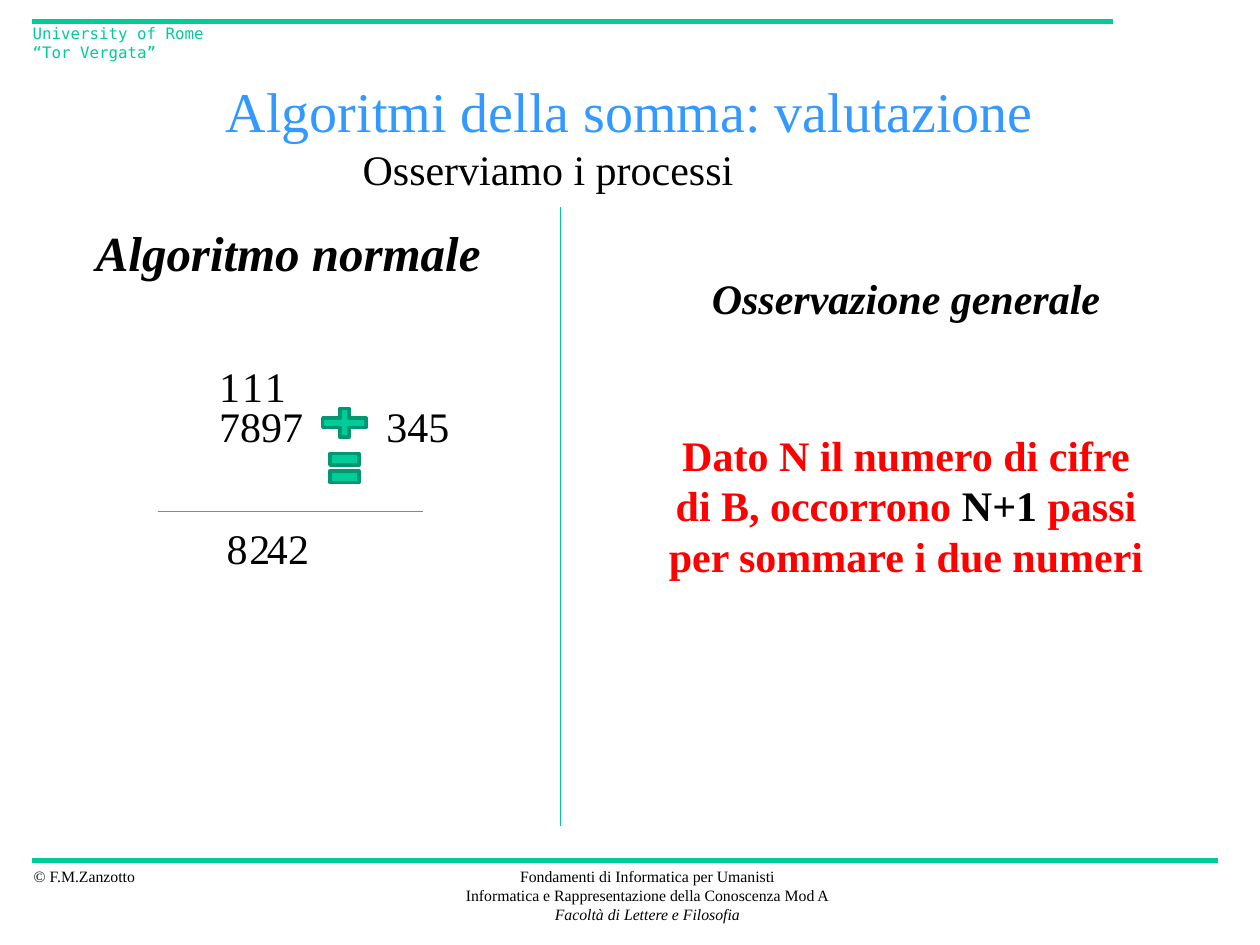
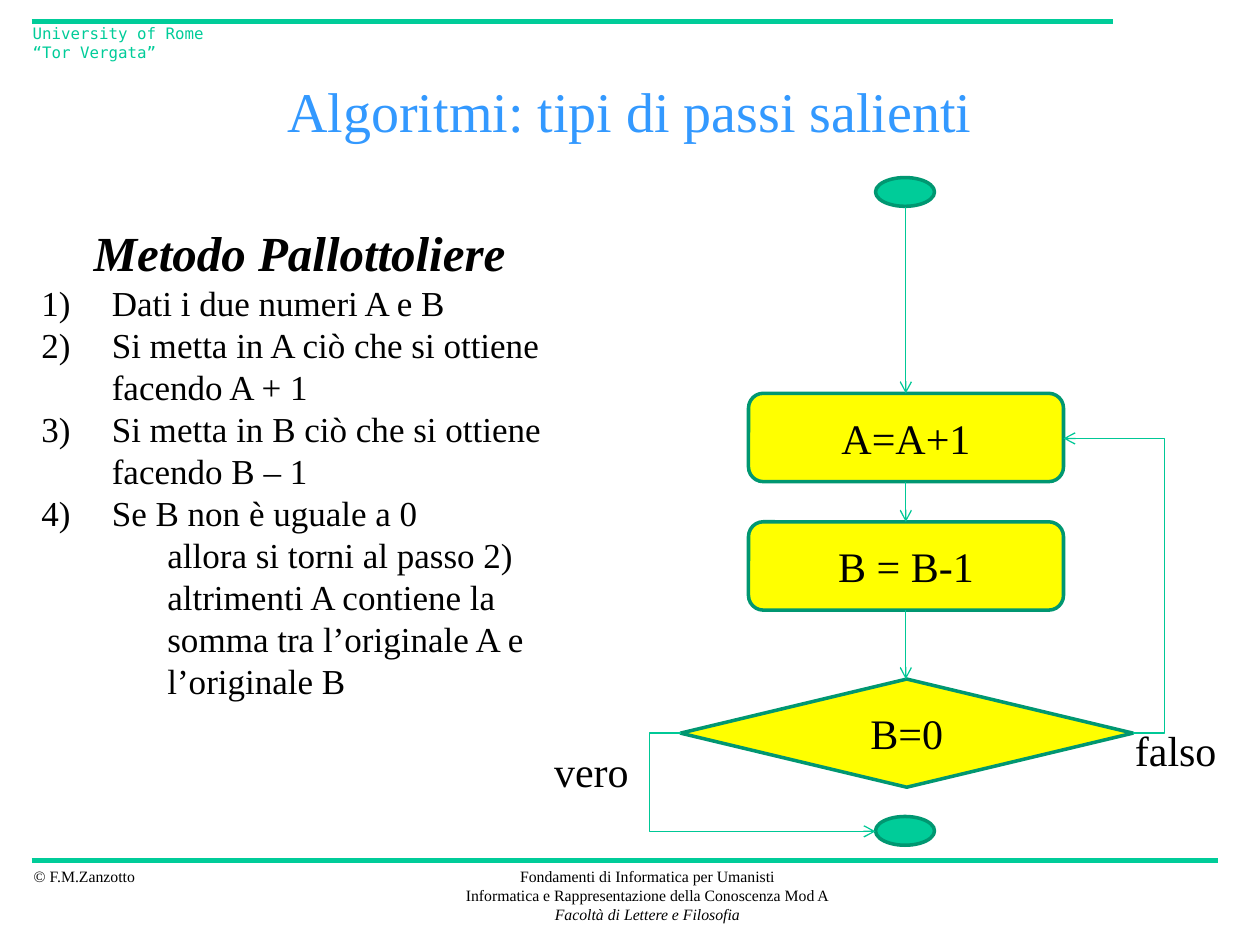
"""Builds two lecture slides on addition algorithms."""
from lxml.etree import SubElement
from pptx import Presentation
from pptx.dml.color import RGBColor
from pptx.enum.shapes import MSO_CONNECTOR as LINK, MSO_SHAPE as SHAPE
from pptx.enum.text import MSO_ANCHOR as ANCHOR, MSO_AUTO_SIZE as FIT, PP_ALIGN as ALIGN
from pptx.oxml.ns import qn
from pptx.util import Cm, Pt

GREEN = RGBColor(0x00, 0xCC, 0x99)
LINK_GREEN = RGBColor(0x00, 0xC8, 0x96)
DARK_GREEN = RGBColor(0x00, 0x97, 0x71)
BLUE = RGBColor(0x33, 0x99, 0xFF)
YELLOW = RGBColor(0xFF, 0xFF, 0x00)
RED = RGBColor(0xFF, 0x00, 0x00)
BLACK = RGBColor(0x00, 0x00, 0x00)
SERIF = "Times New Roman"
MONO = "DejaVu Sans Mono"


def write(paragraph, text, size=24, color=BLACK, font=SERIF, bold=False, italic=False,
          align=ALIGN.LEFT):
    paragraph.alignment = align
    run = paragraph.add_run()
    run.text = text
    run.font.name = font
    run.font.size = Pt(size)
    run.font.bold = bold
    run.font.italic = italic
    run.font.color.rgb = color


def next_paragraph(frame):
    first = frame.paragraphs[0]
    return frame.add_paragraph() if first.runs else first


class Lecture:
    def __init__(self):
        self.deck = Presentation()
        self.deck.slide_width, self.deck.slide_height = Cm(25.4), Cm(19.05)
        self.slide = None

    def start(self, title):
        self.slide = self.deck.slides.add_slide(self.deck.slide_layouts[1])
        self.line(0.64, 17.35, 24.56, 17.35, color=GREEN, width=3)
        self.line(0.64, 0.43, 22.43, 0.43, color=GREEN, width=3)
        self.label("© F.M.Zanzotto", 0.43, 17.35, 2.59, 0.64, size=9)
        footer = self.label("Fondamenti di Informatica per Umanisti",
                            9.09, 17.35, 7.92, 1.42, size=9, align=ALIGN.CENTER)
        write(footer.add_paragraph(), "Informatica e Rappresentazione della Conoscenza Mod A",
              size=9, align=ALIGN.CENTER)
        write(footer.add_paragraph(), "Facoltà di Lettere e Filosofia",
              size=9, italic=True, align=ALIGN.CENTER)
        self.label("University of Rome “Tor Vergata”", 0.41, 0.36, 4.34, 0.64, wrap=True,
                   size=9, color=GREEN, font=MONO)
        frame = self.place(self.slide.shapes.title, 1.9, 1.27, 21.6, 1.9)
        frame.vertical_anchor = ANCHOR.MIDDLE
        write(frame.paragraphs[0], title, size=32, color=BLUE, align=ALIGN.CENTER)

    def place(self, holder, left, top, width, height):
        holder.left, holder.top = Cm(left), Cm(top)
        holder.width, holder.height = Cm(width), Cm(height)
        holder.text_frame.auto_size = FIT.NONE
        return holder.text_frame

    def body(self, heading, left, width):
        frame = self.place(self.slide.placeholders[1], left, 4.17, width, 13.13)
        frame.margin_top = Cm(0.32)
        self.item(frame, heading, 0.97, -0.97, size=28, bold=True, italic=True,
                  align=ALIGN.CENTER)
        return frame

    def item(self, frame, text, margin, indent, level=0, numbered=False, **style):
        paragraph = next_paragraph(frame)
        paragraph.level = level
        paragraph.space_before = Pt(0)
        props = paragraph._p.get_or_add_pPr()
        props.set("marL", str(Cm(margin)))
        props.set("indent", str(Cm(indent)))
        if numbered:
            SubElement(props, qn("a:buFont"), typeface=SERIF)
            SubElement(props, qn("a:buAutoNum"), type="arabicParenR")
        else:
            SubElement(props, qn("a:buNone"))
        write(paragraph, text, **style)

    def label(self, text, left, top, width, height, wrap=False, **style):
        box = self.slide.shapes.add_textbox(Cm(left), Cm(top), Cm(width), Cm(height))
        box.text_frame.word_wrap = wrap
        write(box.text_frame.paragraphs[0], text, **style)
        return box.text_frame

    def shape(self, kind, left, top, width, height, text="", fill=GREEN):
        shape = self.slide.shapes.add_shape(kind, Cm(left), Cm(top), Cm(width), Cm(height))
        shape.shadow.inherit = False
        shape.fill.solid()
        shape.fill.fore_color.rgb = fill
        shape.line.color.rgb = DARK_GREEN
        shape.line.width = Pt(2)
        if text:
            shape.text_frame.vertical_anchor = ANCHOR.MIDDLE
            write(shape.text_frame.paragraphs[0], text, align=ALIGN.CENTER)

    def line(self, x1, y1, x2, y2, color=LINK_GREEN, width=0.75, arrow=False, bend=None):
        kind = LINK.STRAIGHT if bend is None else LINK.ELBOW
        link = self.slide.shapes.add_connector(kind, Cm(x1), Cm(y1), Cm(x2), Cm(y2))
        link.line.color.rgb = color
        link.line.width = Pt(width)
        props = link._element.spPr
        if arrow:
            SubElement(props.find(qn("a:ln")), qn("a:tailEnd"), type="arrow")
        if bend is not None:
            adjust = props.find(qn("a:prstGeom")).find(qn("a:avLst"))
            SubElement(adjust, qn("a:gd"), name="adj1", fmla=f"val {round(bend * 100000)}")
        SubElement(props, qn("a:effectLst"))


def evaluation(lecture):
    lecture.start("Algoritmi della somma: valutazione")
    lecture.body("Algoritmo normale", 0.41, 10.8)
    lecture.line(11.3, 4.17, 11.3, 16.66)
    lecture.label("Osserviamo i processi", 7.06, 2.77, 8.05, 1.27)
    lecture.label("Osservazione generale", 13.11, 5.36, 10.31, 1.27, wrap=True,
                  bold=True, italic=True, align=ALIGN.CENTER)
    remark = lecture.label("Dato N il numero di cifre di B, occorrono ", 13.11, 8.53, 10.31,
                           3.33, wrap=True, color=RED, bold=True, align=ALIGN.CENTER)
    for text, color in (("N+1", BLACK), (" passi per sommare i due numeri", RED)):
        write(remark.paragraphs[0], text, color=color, bold=True, align=ALIGN.CENTER)

    lecture.label("7897", 4.17, 7.95, 2.24, 1.3)
    lecture.label("345", 7.54, 7.95, 1.8, 1.3)
    lecture.shape(SHAPE.MATH_PLUS, 6.35, 8.13, 1.19, 0.79)
    lecture.shape(SHAPE.MATH_EQUAL, 6.55, 8.94, 0.79, 0.99)
    lecture.line(3.18, 10.31, 8.53, 10.31)
    for column in range(3):
        lecture.label("1", 4.17 + 0.46 * column, 7.14, 0.94, 1.3)
    for digit, left in zip("8242", (4.32, 4.78, 5.13, 5.56)):
        lecture.label(digit, left, 10.41, 0.94, 1.3)


def step_types(lecture):
    lecture.start("Algoritmi: tipi di passi salienti")
    method = lecture.body("Metodo Pallottoliere", 0.58, 10.92)
    for step in ("Dati i due numeri A e B",
                 "Si metta in A ciò che si ottiene facendo A + 1",
                 "Si metta in B ciò che si ottiene facendo B – 1",
                 "Se B non è uguale a 0"):
        lecture.item(method, step, 1.42, -1.42, numbered=True, size=20)
    for branch in ("allora si torni al passo 2)",
                   "altrimenti A contiene la somma tra l’originale A e l’originale B"):
        lecture.item(method, branch, 2.54, 0, level=1, size=20)

    for top, action in ((7.93, "A=A+1"), (10.52, "B = B-1")):
        lecture.shape(SHAPE.ROUNDED_RECTANGLE, 15.09, top, 6.35, 1.78, action, YELLOW)
    lecture.shape(SHAPE.DIAMOND, 13.72, 13.69, 9.12, 2.18, "B=0", YELLOW)
    for terminal_top in (3.58, 16.46):
        lecture.shape(SHAPE.OVAL, 17.65, terminal_top, 1.19, 0.58)
    for start, end in ((4.17, 7.93), (9.71, 10.52), (12.3, 13.69)):
        lecture.line(18.26, start, 18.26, end, arrow=True)
    lecture.line(22.84, 14.78, 21.44, 8.84, arrow=True, bend=-0.45)
    lecture.line(13.72, 14.78, 17.65, 16.76, arrow=True, bend=-0.16)
    lecture.label("falso", 22.63, 14.48, 2.18, 1.27)
    lecture.label("vero", 10.92, 14.91, 2.03, 1.27)


def main():
    lecture = Lecture()
    evaluation(lecture)
    step_types(lecture)
    lecture.deck.save("out.pptx")


if __name__ == "__main__":
    main()
